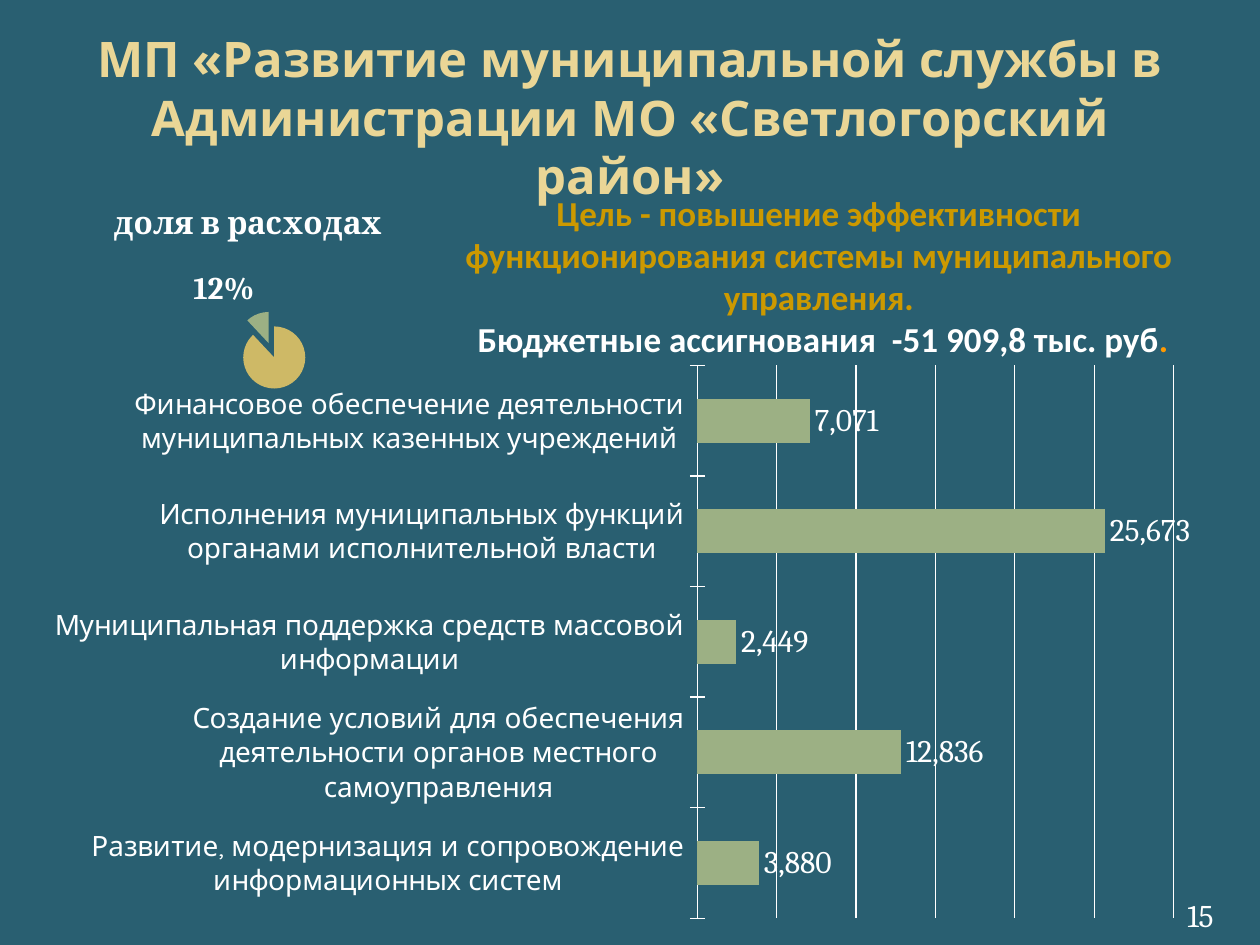
"""Build a slide on a municipal service programme with a bar and a pie chart."""
from dataclasses import dataclass

from lxml import etree
from pptx import Presentation
from pptx import util as u
from pptx.chart import data as cd
from pptx.dml.color import RGBColor
from pptx.enum import chart as ch, text
from pptx.oxml import ns

BACK = RGBColor(0x29, 0x5F, 0x71)
CREAM = RGBColor(0xEA, 0xD6, 0x96)
GOLD = RGBColor(0xCE, 0xB9, 0x66)
GREEN = RGBColor(0x9C, 0xB0, 0x84)
OCHRE = RGBColor(0xCC, 0x99, 0x00)
ORANGE = RGBColor(0xFF, 0x99, 0x00)
WHITE = RGBColor(0xFF, 0xFF, 0xFF)


@dataclass(frozen=True)
class Box:
    left: float
    top: float
    width: float
    height: float

    def lengths(self) -> tuple:
        return tuple(map(u.Inches, (self.left, self.top, self.width, self.height)))


@dataclass(frozen=True)
class Measure:
    name: str
    amount: int


MEASURES = [
    Measure("Развитие, модернизация и сопровождение информационных систем", 3880),
    Measure("Создание условий для обеспечения деятельности органов местного самоуправления", 12836),
    Measure("Муниципальная поддержка средств массовой информации", 2449),
    Measure("Исполнения муниципальных функций органами исполнительной власти", 25673),
    Measure("Финансовое обеспечение деятельности муниципальных казенных учреждений", 7071),
]


def set_font(font, size: float, name: str, color: RGBColor = WHITE, bold: bool = False) -> None:
    font.size, font.name, font.bold = u.Pt(size), name, bold
    font.color.rgb = color


def add_run(p, content: str, *, size: float, name: str, color: RGBColor = WHITE,
            bold: bool = False, align=text.PP_ALIGN.CENTER) -> None:
    p.alignment = align
    r = p.add_run()
    r.text = content
    set_font(r.font, size, name, color, bold)


def add_textbox(s, box: Box):
    tf = s.shapes.add_textbox(*box.lengths()).text_frame
    tf.word_wrap = True
    return tf


def place_plot(chart, area: Box) -> None:
    plot_area = chart.plots[0]._element.getparent()
    for old in plot_area.findall(ns.qn("c:layout")):
        plot_area.remove(old)
    layout = etree.Element(ns.qn("c:layout"))
    manual = etree.SubElement(layout, ns.qn("c:manualLayout"))
    settings = {"layoutTarget": "inner", "xMode": "edge", "yMode": "edge", "x": area.left,
                "y": area.top, "w": area.width, "h": area.height}
    for tag, value in settings.items():
        etree.SubElement(manual, ns.qn(f"c:{tag}")).set("val", str(value))
    plot_area.insert(0, layout)


def add_chart(s, kind, box: Box, area: Box, cats: list[str], name: str, vals: list[int]):
    data = cd.CategoryChartData()
    data.categories = cats
    data.add_series(name, vals)
    chart = s.shapes.add_chart(kind, *box.lengths(), data).chart
    chart.has_legend = False
    set_font(chart.font, 18, "Cambria")
    place_plot(chart, area)
    return chart


def add_labels(plot, number_format: str, bold: bool = False):
    labels = plot.series[0].data_labels
    labels.number_format, labels.number_format_is_linked = number_format, False
    labels.position = ch.XL_LABEL_POSITION.OUTSIDE_END
    set_font(labels.font, 18, "Cambria", bold=bold)
    return labels


def white_line(line) -> None:
    line.color.rgb = WHITE
    line.width = u.Pt(0.75)


def add_bars(s) -> None:
    chart = add_chart(s, ch.XL_CHART_TYPE.BAR_CLUSTERED, Box(0.28, 2.81, 9.22, 4.57),
                      Box(0.57, 0.02, 0.41, 0.96), [m.name for m in MEASURES],
                      "Series 1", [m.amount for m in MEASURES])
    chart.has_title = False
    plot = chart.plots[0]
    plot.gap_width, plot.vary_by_categories = 150, False
    fill = plot.series[0].format.fill
    fill.solid()
    fill.fore_color.rgb = GREEN
    add_labels(plot, "#,##0").show_value = True
    axis = chart.category_axis
    axis.major_tick_mark = ch.XL_TICK_MARK.CROSS
    set_font(axis.tick_labels.font, 16, "Quicksand")
    white_line(axis.format.line)
    axis = chart.value_axis
    axis.visible, axis.has_major_gridlines = False, True
    axis.minimum_scale, axis.maximum_scale, axis.major_unit = 0, 30000, 5000
    white_line(axis.major_gridlines.format.line)


def add_pie(s) -> None:
    title = "доля в расходах"
    chart = add_chart(s, ch.XL_CHART_TYPE.PIE, Box(0.43, 1.47, 3.08, 1.76),
                      Box(0.46, 0.57, 0.2, 0.35), ["1", "2"], title, [88, 12])
    chart.has_title = True
    add_run(chart.chart_title.text_frame.paragraphs[0], title, size=18, name="Cambria", bold=True)
    plot = chart.plots[0]
    series = plot.series[0]
    for i, color in enumerate((GOLD, GREEN)):
        fill = series.points[i].format.fill
        fill.solid()
        fill.fore_color.rgb = color
    explosion = etree.Element(ns.qn("c:explosion"))
    explosion.set("val", "25")
    series._element.find(ns.qn("c:dPt")).addprevious(explosion)
    labels = add_labels(plot, "0%", bold=True)
    labels.show_percentage, labels.show_value = True, False
    hidden = etree.Element(ns.qn("c:dLbl"))
    for tag, value in (("idx", "0"), ("delete", "1")):
        etree.SubElement(hidden, ns.qn(f"c:{tag}")).set("val", value)
    labels._element.insert(0, hidden)


def main() -> None:
    prs = Presentation()
    prs.slide_width, prs.slide_height = u.Inches(10), u.Inches(7.5)
    s = prs.slides.add_slide(prs.slide_layouts[5])
    s.background.fill.solid()
    s.background.fill.fore_color.rgb = BACK

    sp = s.shapes.title
    sp.left, sp.top, sp.width, sp.height = Box(0.5, 0.3, 9, 1.25).lengths()
    tf = sp.text_frame
    tf.vertical_anchor, tf.auto_size = text.MSO_ANCHOR.MIDDLE, text.MSO_AUTO_SIZE.NONE
    add_run(tf.paragraphs[0], "МП «Развитие муниципальной службы в Администрации МО «Светлогорский район»",
            size=28, name="Noto Sans", color=CREAM, bold=True)

    add_bars(s)
    add_pie(s)

    tf = add_textbox(s, Box(3.43, 1.47, 6.14, 1.45))
    goal = dict(size=20, name="Calibri", bold=True)
    add_run(tf.paragraphs[0], "Цель - повышение эффективности функционирования системы "
            "муниципального управления.", color=OCHRE, **goal)
    p = tf.add_paragraph()
    add_run(p, " Бюджетные ассигнования  -51 909,8 тыс. руб", **goal)
    add_run(p, ".", color=ORANGE, **goal)

    tf = add_textbox(s, Box(8.39, 7.06, 1.34, 0.4))
    add_run(tf.paragraphs[0], "15", size=18, name="Cambria", align=text.PP_ALIGN.RIGHT)
    prs.save("out.pptx")


if __name__ == "__main__":
    main()
